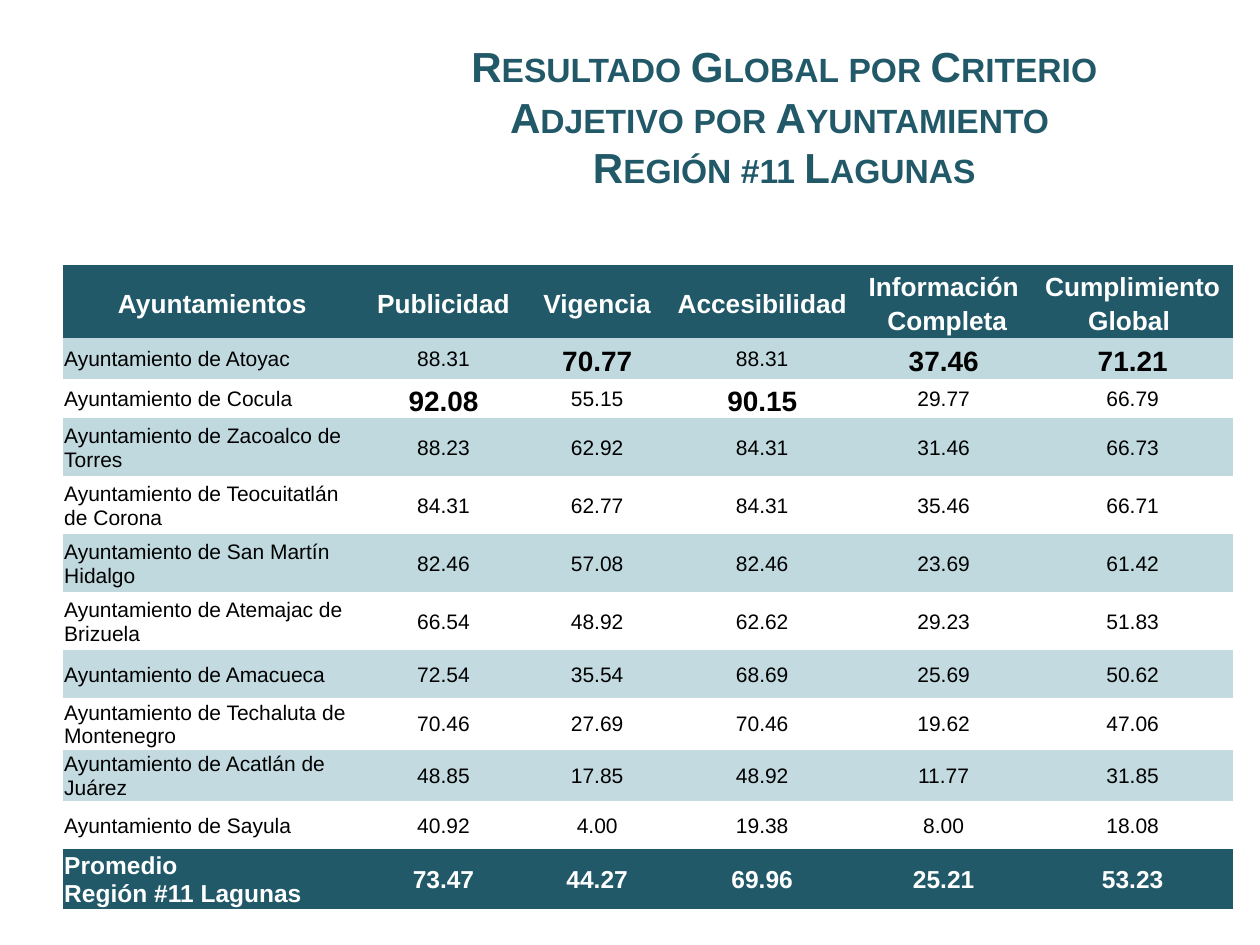
import copy

import pptx
import pptx.dml.color
import pptx.enum.text
import pptx.oxml.ns
import pptx.util

EMU = 9144
TEAL, WHITE, BLACK = "215968", "FFFFFF", "000000"
PALE, LIGHT = "BFD9DF", "C2DAE0"
PLAIN = "{2D5ABB26-0587-4C30-8999-92F81FD0307C}"
ALIGN = pptx.enum.text.PP_ALIGN
MIDDLE = pptx.enum.text.MSO_ANCHOR.MIDDLE

TITLE = "Resultado Global por Criterio Adjetivo por Ayuntamiento \vRegión #11 Lagunas"
COLS = [237, 130, 114, 148, 140, 160]
ROWS = [52, 32, 31] + [46] * 4 + [38] * 5
HEADS = ["Ayuntamientos", "Publicidad", "Vigencia", "Accesibilidad",
         "Información\v Completa", "Cumplimiento Global "]
SCORES = [
    ["Atoyac", "88.31", "70.77", "88.31", "37.46", "71.21"],
    ["Cocula", "92.08", "55.15", "90.15", "29.77", "66.79"],
    ["Zacoalco de Torres", "88.23", "62.92", "84.31", "31.46", "66.73"],
    ["Teocuitatlán de Corona", "84.31", "62.77", "84.31", "35.46", "66.71"],
    ["San Martín Hidalgo", "82.46", "57.08", "82.46", "23.69", "61.42"],
    ["Atemajac de Brizuela", "66.54", "48.92", "62.62", "29.23", "51.83"],
    ["Amacueca", "72.54", "35.54", "68.69", "25.69", "50.62"],
    ["Techaluta de Montenegro", "70.46", "27.69", "70.46", "19.62", "47.06"],
    ["Acatlán de Juárez", "48.85", "17.85", "48.92", "11.77", "31.85"],
    ["Sayula", "40.92", "4.00", "19.38", "8.00", "18.08"],
]
MEANS = ["Promedio\nRegión #11 Lagunas", "73.47", "44.27", "69.96", "25.21", "53.23"]
FILLS = [PALE, None, PALE, None, PALE, None, LIGHT, None, LIGHT, None]

HEAD = {"size": 15, "bold": True, "hue": WHITE, "lead": 1.15}
BODY = {"size": 12, "bold": False, "hue": BLACK, "lead": None}
BEST = {"size": 16, "bold": True, "hue": BLACK, "lead": 1.15}
FOOT = {"size": 14, "bold": True, "hue": WHITE, "lead": None}
TOP = {"size": 24, "bold": True, "hue": TEAL, "lead": None}


def px(num):
    """Turn whole px into EMU."""
    return pptx.util.Emu(num * EMU)


def tint(code):
    """Turn a hex string into a colour."""
    return pptx.dml.color.RGBColor.from_string(code)


def assign(item, values):
    """Set each named attribute of an item."""
    for name, value in values.items():
        setattr(item, name, value)


def write(frame, text, look, align, caps=False):
    """Fill a text frame with text in one look."""
    frame.text = text
    for para in frame.paragraphs:
        assign(para, {"alignment": align, "line_spacing": look["lead"]})
        for run in para.runs:
            assign(run.font, {"name": "Arial", "size": pptx.util.Pt(look["size"]),
                              "bold": look["bold"]})
            run.font.color.rgb = tint(look["hue"])
            props = run.font._element
            if caps:
                props.set("cap", "small")
        for gap in para._p.findall(pptx.oxml.ns.qn("a:br")):
            gap.insert(0, copy.deepcopy(props))


def paint(cell, text, look, fill, align):
    """Write and fill one table cell."""
    assign(cell, {"vertical_anchor": MIDDLE, "margin_left": px(1), "margin_top": px(1),
                  "margin_right": px(1), "margin_bottom": px(0)})
    write(cell.text_frame, text, look, align)
    if fill:
        cell.fill.solid()
        cell.fill.fore_color.rgb = tint(fill)
    else:
        cell.fill.background()


def add_title(slide):
    """Add the slide heading."""
    frame = slide.shapes.add_textbox(px(295), px(30), px(655), px(125)).text_frame
    assign(frame, {"word_wrap": True, "vertical_anchor": MIDDLE})
    write(frame, TITLE, TOP, ALIGN.CENTER, caps=True)


def add_grid(slide):
    """Add the score table, with the best score of each column in bold."""
    table = slide.shapes.add_table(len(ROWS), len(COLS), px(50), px(210),
                                   px(sum(COLS)), px(sum(ROWS))).table
    assign(table, {"first_row": False, "horz_banding": False})
    table._tbl.tblPr.find(pptx.oxml.ns.qn("a:tableStyleId")).text = PLAIN
    for col, width in zip(table.columns, COLS):
        col.width = px(width)
    for row, height in zip(table.rows, ROWS):
        row.height = px(height)
    best = [None] + [max(col, key=float) for col in list(zip(*SCORES))[1:]]
    towns = [["Ayuntamiento de " + name, *marks] for name, *marks in SCORES]
    lines = [(HEADS, HEAD, TEAL), *((town, BODY, fill) for town, fill in zip(towns, FILLS)),
             (MEANS, FOOT, TEAL)]
    for r, (texts, base, fill) in enumerate(lines):
        for c, text in enumerate(texts):
            look = BEST if base is BODY and text == best[c] else base
            align = ALIGN.LEFT if c == 0 and r > 0 else ALIGN.CENTER
            paint(table.cell(r, c), text, look, fill, align)


def main():
    """Build and save the slide."""
    deck = pptx.Presentation()
    assign(deck, {"slide_width": px(1000), "slide_height": px(750)})
    slide = deck.slides.add_slide(deck.slide_layouts[6])
    add_title(slide)
    add_grid(slide)
    deck.save("out.pptx")


if __name__ == "__main__":
    main()
